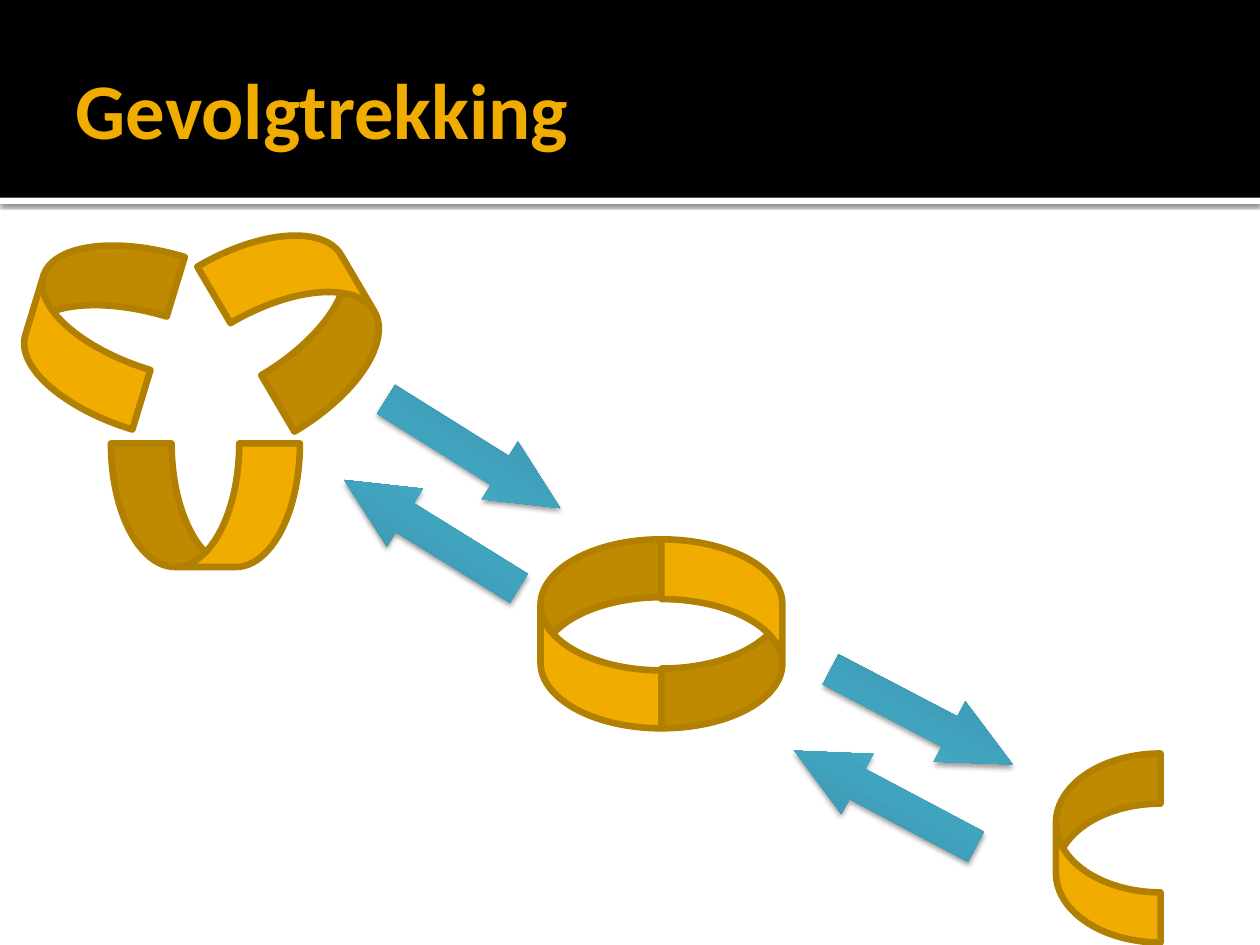
from dataclasses import dataclass

from lxml import etree
from pptx import Presentation
from pptx.dml.color import RGBColor
from pptx.enum import shapes, text
from pptx.oxml import ns
from pptx.util import Pt

GOLD, DARK_GOLD = "F0AD00", "B28000"
BLACK, WHITE = "000000", "FFFFFF"
BLUE_STOPS = ((0, "378BA2"), (55, "41A4BF"), (100, "4BBFDE"))


@dataclass
class Band:
    """Half of a ring: a curved arrow without its head."""
    left: float
    top: float
    width: float
    height: float
    rotation: float = 0
    bend: tuple[float, float, float] = (0.513, 0.479, 0)
    flipped: bool = False


@dataclass
class Arrow:
    left: float
    top: float
    rotation: float
    width: float = 117.4
    height: float = 38.9


def color(value: str) -> RGBColor:
    return RGBColor.from_string(value)


def child(parent, tag: str, **attributes):
    element = etree.SubElement(parent, ns.qn(tag))
    for name, value in attributes.items():
        element.set(name, str(value))
    return element


def add_shadow(shape, opacity: int, blur: float, distance: float) -> None:
    effects = shape._element.spPr.find(ns.qn("a:effectLst"))
    shadow = child(effects, "a:outerShdw", blurRad=Pt(blur), dist=Pt(distance),
                   dir=90 * 60000, algn="t", rotWithShape=0)
    tint = child(shadow, "a:srgbClr", val=BLACK)
    child(tint, "a:alpha", val=opacity * 1000)


def add_shape(parent, kind, left: float, top: float, width: float, height: float,
              fill: str | None = None, rotation: float = 0, adjustments=()):
    shape = parent.add_shape(kind, Pt(left), Pt(top), Pt(width), Pt(height))
    shape.shadow.inherit = False
    shape.line.fill.background()
    shape.rotation = rotation
    for index, value in enumerate(adjustments):
        shape.adjustments[index] = value
    if fill:
        shape.fill.solid()
        shape.fill.fore_color.rgb = color(fill)
    return shape


def write(frame, words: str, *, size: float, font: str, fill: str, bold: bool = False,
          align=text.PP_ALIGN.LEFT) -> None:
    paragraph = frame.paragraphs[0]
    paragraph.alignment = align
    run = paragraph.add_run()
    run.text = words
    run.font.size, run.font.name, run.font.bold = Pt(size), font, bold
    run.font.color.rgb = color(fill)


def draw_band(parent, band: Band) -> None:
    shape = add_shape(parent, shapes.MSO_SHAPE.CURVED_RIGHT_ARROW, band.left, band.top,
                      band.width, band.height, GOLD, band.rotation, band.bend)
    shape.line.width = Pt(3.78)
    shape.line.color.rgb = color(DARK_GOLD)
    child(shape.line._ln, "a:round")
    if band.flipped:
        shape._element.spPr.xfrm.set("flipH", "1")
        shape._element.spPr.xfrm.set("flipV", "1")


def draw_arrow(parent, arrow: Arrow) -> None:
    shape = add_shape(parent, shapes.MSO_SHAPE.LEFT_ARROW, arrow.left, arrow.top, arrow.width,
                      arrow.height, rotation=arrow.rotation, adjustments=(0.5, 1.048))
    shape.fill.gradient()
    shape.fill.gradient_angle = 90
    stops = shape._element.spPr.find(ns.qn("a:gradFill")).find(ns.qn("a:gsLst"))
    for stop in list(stops):
        stops.remove(stop)
    for position, value in BLUE_STOPS:
        child(child(stops, "a:gs", pos=position * 1000), "a:srgbClr", val=value)
    add_shadow(shape, 38, 3.1, 2)


THREE_BANDS = (
    Band(18, 133.9, 74.2, 103, 16.9),
    Band(135.4, 126, 74.2, 109.4, 329.5, (0.504, 0.504, 0), True),
    Band(82.1, 234.7, 70.6, 108, 270, (0.491, 0.491, 0)),
)
RING = (
    Band(308.9, 308.2, 69.1, 108),
    Band(378, 308.2, 69.1, 108, 0, (0.504, 0.494, 0), True),
)
HALF_RING = Band(603.4, 430.6, 59.8, 108)
ARROW_PAIRS = (
    (Arrow(187.9, 285.8, 31.8), Arrow(211.7, 239.8, 212)),
    (Arrow(468, 390.2, 207.6), Arrow(447.1, 437, 27.9)),
)


def main() -> None:
    deck = Presentation()
    deck.slide_width, deck.slide_height = Pt(720), Pt(540)
    slide = deck.slides.add_slide(deck.slide_layouts[5])

    # Header
    rule = add_shape(slide.shapes, shapes.MSO_SHAPE.RECTANGLE, 0, 113, 720, 3.6, WHITE)
    add_shadow(rule, 60, 2.5, 0.8)
    add_shape(slide.shapes, shapes.MSO_SHAPE.RECTANGLE, 0, 0, 720, 113, BLACK)

    # Title, brought in front of the header
    title = slide.shapes.title
    title.left, title.top, title.width, title.height = Pt(36), Pt(12.2), Pt(648), Pt(98.6)
    slide.shapes._spTree.append(title._element)
    frame = title.text_frame
    frame.vertical_anchor = text.MSO_ANCHOR.MIDDLE
    frame.margin_left = Pt(7.2)
    frame.margin_top = frame.margin_right = frame.margin_bottom = Pt(3.6)
    write(frame, "Gevolgtrekking", size=45, font="Calibri", fill=GOLD, bold=True)

    # Rings
    for bands in (THREE_BANDS, RING):
        group = slide.shapes.add_group_shape()
        for band in bands:
            draw_band(group.shapes, band)
    draw_band(slide.shapes, HALF_RING)

    # Arrows back and forth between the rings
    for pair in ARROW_PAIRS:
        group = slide.shapes.add_group_shape()
        for arrow in pair:
            draw_arrow(group.shapes, arrow)

    deck.save("out.pptx")


if __name__ == "__main__":
    main()
